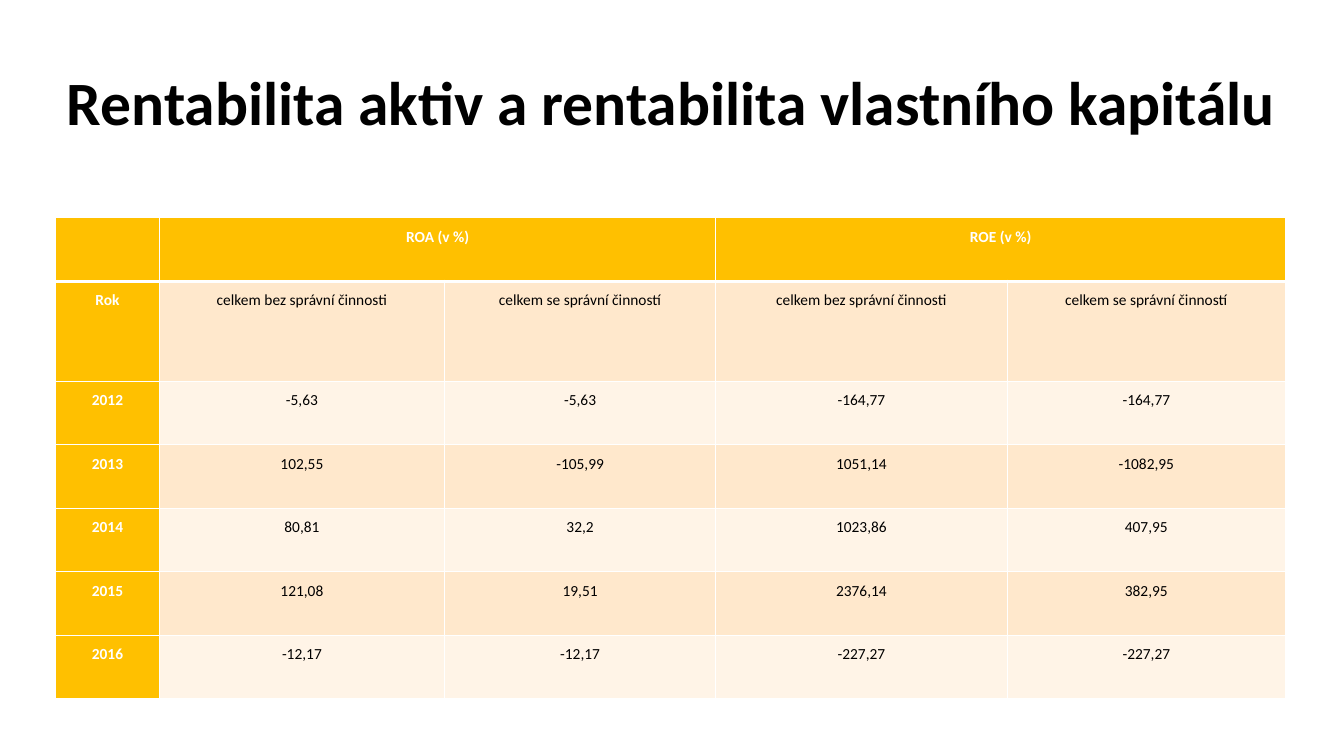
from lxml import etree
from pptx import Presentation
from pptx.dml.color import RGBColor
from pptx.enum import text
from pptx.oxml import ns
from pptx.util import Cm, Pt

FONT = "Calibri"
BLACK, WHITE = "000000", "FFFFFF"
GOLD, PEACH, CREAM = "FFC000", "FFE8CC", "FFF4E7"

TITLE = "Rentabilita aktiv a rentabilita vlastního kapitálu"
WITHOUT_ADMIN = "celkem bez správní činnosti"
WITH_ADMIN = "celkem se správní činností"
ROWS = [
    ["", "ROA (v %)", "", "ROE (v %)", ""],
    ["Rok"] + [WITHOUT_ADMIN, WITH_ADMIN] * 2,
    ["2012", "-5,63", "-5,63", "-164,77", "-164,77"],
    ["2013", "102,55", "-105,99", "1051,14", "-1082,95"],
    ["2014", "80,81", "32,2", "1023,86", "407,95"],
    ["2015", "121,08", "19,51", "2376,14", "382,95"],
    ["2016", "-12,17", "-12,17", "-227,27", "-227,27"],
]
COLUMN_WIDTHS = [2.62, 7.18, 6.84, 7.34, 7.02]
ROW_HEIGHTS = [1.6, 2.52] + [1.6] * 5


def colour(value):
    return RGBColor.from_string(value)


def format_paragraph(para, size, value, bold, spacing):
    para.alignment = text.PP_ALIGN.CENTER
    para.line_spacing = spacing
    para.font.name = FONT
    para.font.size = Pt(size)
    para.font.bold = bold
    para.font.color.rgb = colour(value)


def add_title(page):
    title = page.shapes.title
    title.left, title.top = Cm(0.64), Cm(1.68)
    title.width, title.height = Cm(32.59), Cm(1.96)
    title.text_frame.text = TITLE
    title.text_frame.auto_size = text.MSO_AUTO_SIZE.NONE
    format_paragraph(title.text_frame.paragraphs[0], 44, BLACK, True, 0.9)


def set_borders(cell, top, bottom):
    """Draw white cell borders; top and bottom are widths in points."""
    properties = cell._tc.get_or_add_tcPr()
    for side, width in (("L", 1), ("R", 1), ("T", top), ("B", bottom)):
        line = etree.SubElement(properties, ns.qn(f"a:ln{side}"), w=str(Pt(width)))
        fill = etree.SubElement(line, ns.qn("a:solidFill"))
        etree.SubElement(fill, ns.qn("a:srgbClr"), val=WHITE)


def format_cell(cell, row, column):
    heading = row == 0 or column == 0
    set_borders(cell, 3 if row == 1 else 1, 3 if row == 0 else 1)
    cell.fill.solid()
    cell.fill.fore_color.rgb = colour(GOLD if heading else PEACH if row % 2 else CREAM)
    cell.margin_left = cell.margin_right = Cm(0.18)
    cell.margin_top = cell.margin_bottom = 0
    format_paragraph(cell.text_frame.paragraphs[0], 11,
                     WHITE if heading else BLACK, heading, 1.5)


def add_profitability_table(page):
    table = page.shapes.add_table(
        len(ROWS), len(COLUMN_WIDTHS), Cm(1.4), Cm(5.49),
        Cm(sum(COLUMN_WIDTHS)), Cm(sum(ROW_HEIGHTS))).table
    for column, width in zip(table.columns, COLUMN_WIDTHS):
        column.width = Cm(width)
    for row, height in zip(table.rows, ROW_HEIGHTS):
        row.height = Cm(height)
    for row, values in enumerate(ROWS):
        for column, value in enumerate(values):
            cell = table.cell(row, column)
            cell.text = value
            format_cell(cell, row, column)
    for first in (1, 3):
        table.cell(0, first).merge(table.cell(0, first + 1))


def main():
    deck = Presentation()
    deck.slide_width, deck.slide_height = Cm(33.87), Cm(19.05)
    page = deck.slides.add_slide(deck.slide_layouts[5])
    add_title(page)
    add_profitability_table(page)
    deck.save("out.pptx")


if __name__ == "__main__":
    main()
